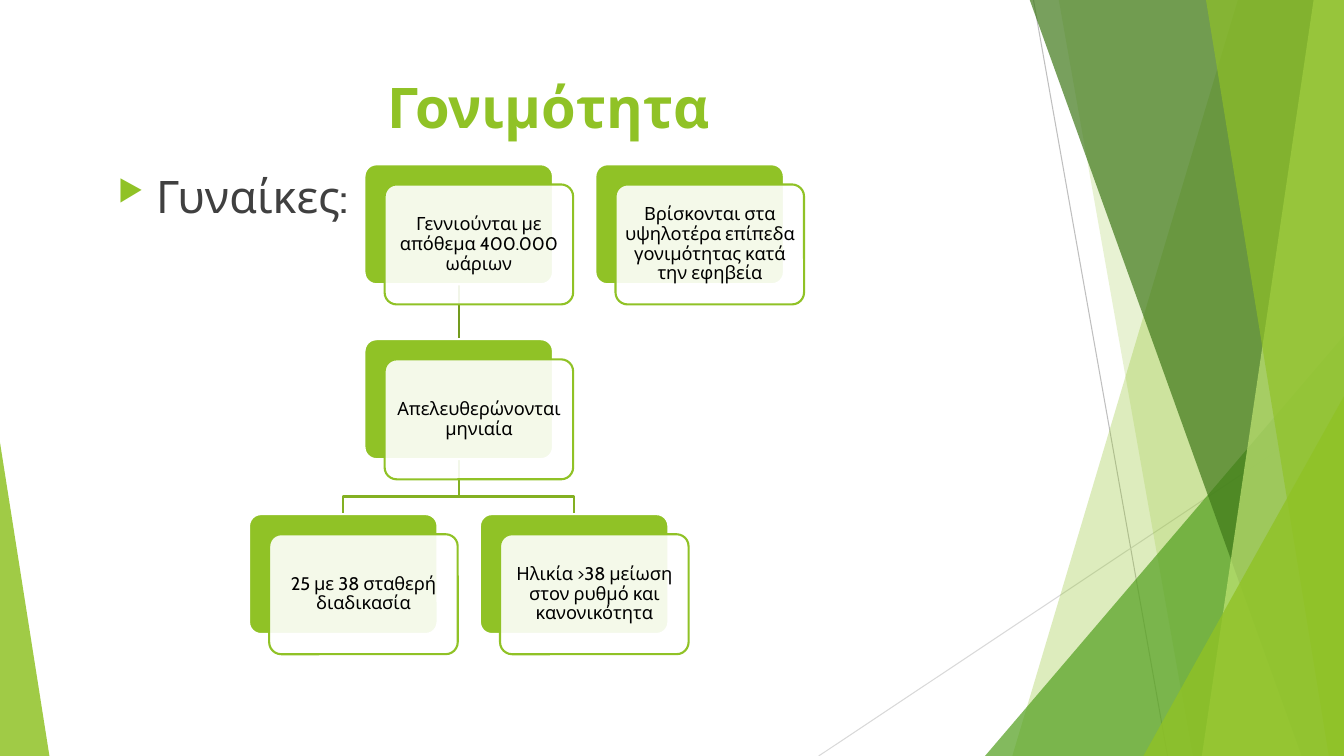
import pptx
import pptx.util
import pptx.dml.color
import pptx.enum.shapes
import pptx.enum.text
import pptx.oxml
import pptx.oxml.ns
import lxml.etree

# Content
TITLE = "Γονιμότητα"
SUBJECT = "Γυναίκες:"
# key: (half-column, row, text, parent key)
CARDS = {
    "stock": (1, 0, "Γεννιούνται με απόθεμα 400.000 ωάριων", None),
    "release": (1, 1, "Απελευθερώνονται μηνιαία", "stock"),
    "steady": (0, 2, "25 με 38 σταθερή διαδικασία", "release"),
    "decline": (2, 2, "Ηλικία >38 μείωση στον ρυθμό και κανονικότητα", "release"),
    "peak": (3, 0, "Βρίσκονται στα υψηλοτέρα επίπεδα γονιμότητας κατά την εφηβεία", None),
}

THEME = {
    "font": "Cabin", "green": "90C226", "white": "FFFFFF", "black": "000000",
    "body": "404040", "link_top": "739B1E", "link_low": "83B022",
    "title_size": 40, "body_size": 32, "card_size": 13, "line": 1.5, "hairline": 0.75,
}

# Side decoration: straight lines, then shards from back to front
HAIRLINES = [((10.25, 0), (11.58, 7.5), "BFBFBF"), ((13.33, 4.03), (8.12, 7.5), "D9D9D9")]
# Four corners: x of top left, top right, bottom right, bottom left, colour, opacity
# Triangle: left, top, width, height, apex, colour, opacity
SHARDS = [
    (12.28, 13.33, 13.33, 10.04, "90C226", 30),
    (10.5, 13.33, 13.33, 11.83, "90C226", 20),
    (9.77, 3.33, 3.56, 4.17, 1, "54A021", 72),
    (10.21, 13.33, 13.33, 12.91, "3F7819", 70),
    (13.03, 13.33, 13.33, 11.92, "C0E474", 70),
    (11.96, 13.33, 13.33, 13.18, "90C226", 65),
    (11.34, 3.93, 1.99, 3.57, 1, "90C226", 80),
    (0, 4.39, 0.49, 3.11, 0, "90C226", 85),
]

# Card grid
GRID_LEFT, GRID_TOP = 2.47, 1.63
HALF_COLUMN, ROW = 2.29 / 2, 3.47 / 2
CARD_WIDTH, CARD_HEIGHT = 1.87, 1.19
OFFSET_X, OFFSET_Y = 0.2, 0.2
BEND = 0.68

Inches = pptx.util.Inches
SHAPE = pptx.enum.shapes.MSO_SHAPE
ALIGN = pptx.enum.text.PP_ALIGN
ANCHOR = pptx.enum.text.MSO_ANCHOR


def color(code):
    return pptx.dml.color.RGBColor.from_string(code)


def style(shape, fill=None, line=None, opacity=100):
    shape.shadow.inherit = False
    if fill:
        shape.fill.solid()
        shape.fill.fore_color.rgb = color(fill)
        if opacity < 100:
            code = shape.fill._xPr.find(".//" + pptx.oxml.ns.qn("a:srgbClr"))
            alpha = lxml.etree.SubElement(code, pptx.oxml.ns.qn("a:alpha"))
            alpha.set("val", str(opacity * 1000))
    else:
        shape.fill.background()
    if line:
        shape.line.color.rgb = color(line)
        shape.line.width = pptx.util.Pt(THEME["line"])
    else:
        shape.line.fill.background()


def add_run(paragraph, text, size, code, bold=False):
    run = paragraph.add_run()
    run.text = text
    run.font.name = THEME["font"]
    run.font.size = pptx.util.Pt(size)
    run.font.bold = bold
    run.font.color.rgb = color(code)


def add_line(slide, start, end, code, width):
    line = slide.shapes.add_connector(
        pptx.enum.shapes.MSO_CONNECTOR.STRAIGHT, *map(Inches, start + end))
    line.line.color.rgb = color(code)
    line.line.width = pptx.util.Pt(width)
    lxml.etree.SubElement(line._element.spPr, pptx.oxml.ns.qn("a:effectLst"))


def add_path(slide, points, close):
    # Whole-unit coordinates: the builder rounds every point
    points = [(Inches(x), Inches(y)) for x, y in points]
    builder = slide.shapes.build_freeform(*points[0])
    builder.add_line_segments(points[1:], close=close)
    return builder.convert_to_shape()


def add_decoration(slide):
    for start, end, code in HAIRLINES:
        add_line(slide, start, end, code, THEME["hairline"])
    for *numbers, code, opacity in SHARDS:
        if len(numbers) == 5:
            *box, apex = numbers
            shard = slide.shapes.add_shape(SHAPE.ISOSCELES_TRIANGLE, *map(Inches, box))
            shard.adjustments[0] = apex
        else:
            shard = add_path(slide, list(zip(numbers, (-0.01, -0.01, 7.5, 7.5))), True)
        style(shard, code, opacity=opacity)


def add_title(slide):
    title = slide.shapes.title
    title.left, title.top, title.width, title.height = map(Inches, (0.74, 0.67, 9.4, 1.44))
    title.text_frame.vertical_anchor = ANCHOR.TOP
    paragraph = title.text_frame.paragraphs[0]
    paragraph.alignment = ALIGN.CENTER
    add_run(paragraph, TITLE, THEME["title_size"], THEME["green"], True)


def add_subject(slide):
    box = slide.shapes.add_textbox(*map(Inches, (1.07, 1.62, 4.58, 4.24)))
    box.text_frame.word_wrap = True
    paragraph = box.text_frame.paragraphs[0]
    paragraph.space_before = pptx.util.Pt(10)
    properties = paragraph._p.get_or_add_pPr()
    properties.set("marL", str(Inches(0.38)))
    properties.set("indent", str(-Inches(0.38)))
    namespace = pptx.oxml.ns.nsdecls("a")
    for xml in (
        f'<a:buClr {namespace}><a:srgbClr val="{THEME["green"]}"/></a:buClr>',
        f'<a:buSzPct {namespace} val="65000"/>',
        f'<a:buChar {namespace} char="▶"/>',
    ):
        properties.append(pptx.oxml.parse_xml(xml))
    add_run(paragraph, SUBJECT, THEME["body_size"], THEME["body"])


def card_corner(key):
    column, row = CARDS[key][:2]
    return GRID_LEFT + column * HALF_COLUMN, GRID_TOP + row * ROW


def add_link(slide, parent, child):
    parent_left, parent_top = card_corner(parent)
    child_left, end_y = card_corner(child)
    start_x, end_x = parent_left + CARD_WIDTH / 2, child_left + CARD_WIDTH / 2
    start_y = parent_top + CARD_HEIGHT
    if start_x == end_x:
        add_line(slide, (start_x, start_y), (end_x, end_y), THEME["link_top"], THEME["line"])
        return
    bend_y = start_y + BEND * (end_y - start_y)
    points = [(start_x, start_y), (start_x, bend_y), (end_x, bend_y), (end_x, end_y)]
    style(add_path(slide, points, False), line=THEME["link_low"])


def add_card(slide, key):
    left, top = card_corner(key)
    for shift_x, shift_y, fill, line, opacity in (
        (0, 0, THEME["green"], THEME["white"], 100),
        (OFFSET_X, OFFSET_Y, THEME["white"], THEME["green"], 90),
    ):
        card = slide.shapes.add_shape(SHAPE.ROUNDED_RECTANGLE, *map(
            Inches, (left + shift_x, top + shift_y, CARD_WIDTH, CARD_HEIGHT)))
        card.adjustments[0] = 0.1
        style(card, fill, line, opacity)
    # The front card carries the text
    frame = card.text_frame
    frame.word_wrap = True
    frame.vertical_anchor = ANCHOR.MIDDLE
    frame.margin_left = frame.margin_right = Inches(0.05)
    frame.margin_top = frame.margin_bottom = Inches(0.05)
    paragraph = frame.paragraphs[0]
    paragraph.alignment = ALIGN.CENTER
    paragraph.line_spacing = 0.9
    add_run(paragraph, CARDS[key][2], THEME["card_size"], THEME["black"])


def main():
    presentation = pptx.Presentation()
    presentation.slide_width, presentation.slide_height = Inches(13.33), Inches(7.5)
    slide = presentation.slides.add_slide(presentation.slide_layouts[5])
    add_decoration(slide)
    add_title(slide)
    add_subject(slide)
    # Links lie behind the cards
    for key, (_, _, _, parent) in CARDS.items():
        if parent:
            add_link(slide, parent, key)
    for key in CARDS:
        add_card(slide, key)
    presentation.save("out.pptx")


if __name__ == "__main__":
    main()
